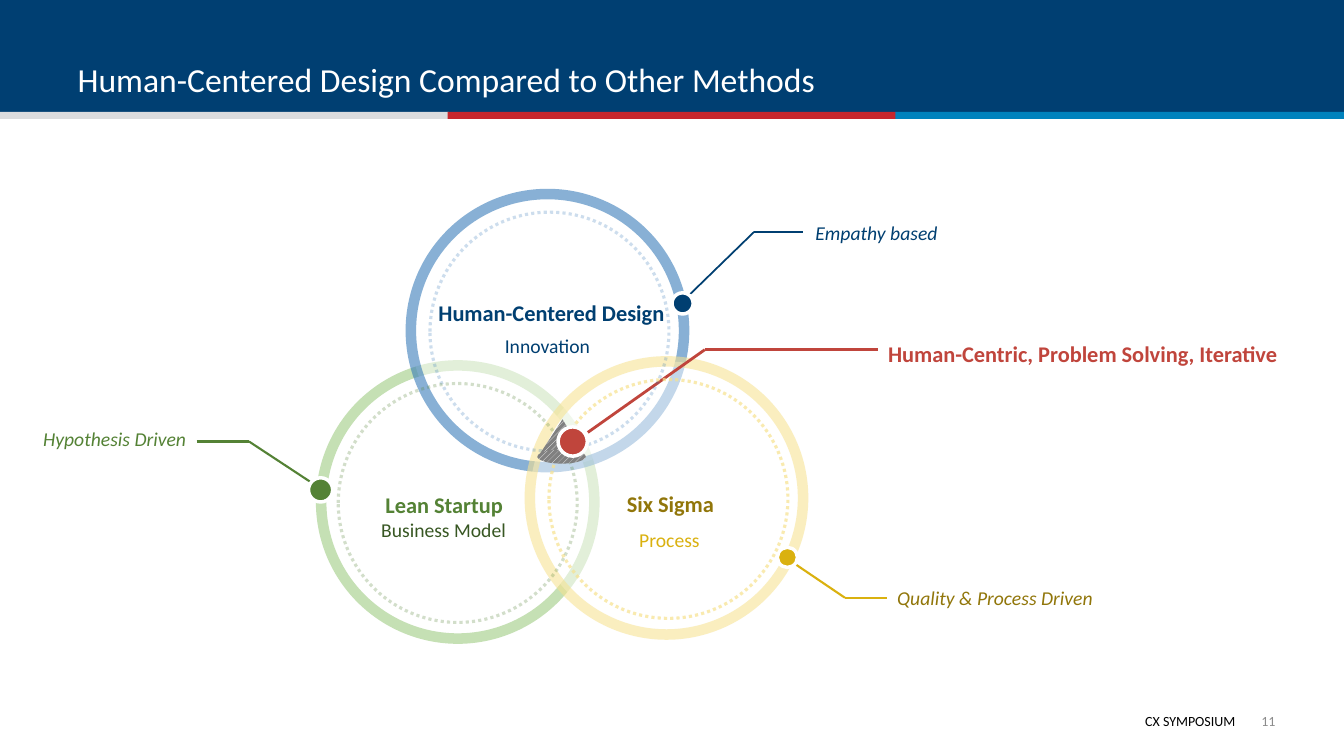
from itertools import pairwise

from lxml import etree
from pptx import Presentation
from pptx.dml.color import RGBColor
from pptx.enum.dml import MSO_LINE, MSO_PATTERN
from pptx.enum.shapes import MSO_CONNECTOR, MSO_SHAPE
from pptx.enum.text import MSO_ANCHOR, PP_ALIGN
from pptx.oxml.ns import qn
from pptx.util import Inches, Pt

RECT, OVAL, WEDGE = MSO_SHAPE.RECTANGLE, MSO_SHAPE.OVAL, MSO_SHAPE.ISOSCELES_TRIANGLE
LEFT, CENTER, RIGHT = PP_ALIGN.LEFT, PP_ALIGN.CENTER, PP_ALIGN.RIGHT
TOP, MIDDLE, BOTTOM = MSO_ANCHOR.TOP, MSO_ANCHOR.MIDDLE, MSO_ANCHOR.BOTTOM
STRAIGHT = MSO_CONNECTOR.STRAIGHT
DOTTED = MSO_LINE.ROUND_DOT
HATCH = MSO_PATTERN.WIDE_UPWARD_DIAGONAL

WHITE = RGBColor(0xFF, 0xFF, 0xFF)
BLACK = RGBColor(0x00, 0x00, 0x00)
GRAY = RGBColor(0x8C, 0x8C, 0x8C)
SHADE = RGBColor(0x80, 0x80, 0x80)
BAND = RGBColor(0x00, 0x3F, 0x72)
SILVER = RGBColor(0xDB, 0xDC, 0xDE)
CRIMSON = RGBColor(0xC6, 0x26, 0x2D)
AZURE = RGBColor(0x00, 0x82, 0xBD)
NAVY = RGBColor(0x00, 0x3F, 0x71)
BLUE = RGBColor(0x2E, 0x75, 0xB6)
MINT = RGBColor(0xC5, 0xE0, 0xB4)
GREEN = RGBColor(0x54, 0x82, 0x35)
FOREST = RGBColor(0x38, 0x57, 0x23)
CREAM = RGBColor(0xF7, 0xE2, 0x8F)
GOLD = RGBColor(0xDA, 0xB1, 0x0F)
OLIVE = RGBColor(0x91, 0x76, 0x0A)
RED = RGBColor(0xC0, 0x45, 0x3C)

RING, INNER = 2.71, 2.37  # circle diameters


def set_alpha(node, percent):
    """Set the opacity of the first colour under a node."""
    color = next(node.iter(qn("a:srgbClr")))
    etree.SubElement(color, qn("a:alpha")).set("val", str(percent * 1000))


def add_form(slide, kind, left, top, width, height, fill=None):
    form = slide.shapes.add_shape(
        kind, Inches(left), Inches(top), Inches(width), Inches(height))
    form.shadow.inherit = False
    form.line.fill.background()
    if fill is None:
        form.fill.background()
    else:
        form.fill.solid()
        form.fill.fore_color.rgb = fill
    return form


def add_disc(slide, x, y, size, fill, color, weight):
    """Draw a circle around its centre."""
    disc = add_form(slide, OVAL, x - size / 2, y - size / 2, size, size, fill)
    disc.line.color.rgb = color
    disc.line.width = Pt(weight)
    return disc


def add_ring(slide, x, y, color, alpha):
    ring = add_disc(slide, x, y, RING, WHITE, color, 7.5)
    set_alpha(ring.fill._xPr.find(qn("a:solidFill")), 50)
    set_alpha(ring.line._ln, alpha)


def add_dots(slide, x, y, color, alpha):
    ring = add_disc(slide, x, y, INNER, None, color, 2.25)
    ring.line.dash_style = DOTTED
    set_alpha(ring.line._ln, alpha)


def add_leader(slide, points, color, weight):
    """Join the points with straight lines."""
    for start, end in pairwise(points):
        line = slide.shapes.add_connector(
            STRAIGHT, *(Inches(value) for value in (*start, *end)))
        line.line.color.rgb = color
        line.line.width = Pt(weight)
        etree.SubElement(line._element.spPr, qn("a:effectLst"))


def add_hatch(slide, kind, left, top, width, height):
    form = add_form(slide, kind, left, top, width, height)
    form.fill.patterned()
    form.fill.pattern = HATCH
    form.fill.fore_color.rgb = WHITE
    form.fill.back_color.rgb = SHADE
    return form


def set_text(frame, text, size, color, align=LEFT, bold=False, italic=False):
    frame.text = text
    frame.word_wrap = True
    para = frame.paragraphs[0]
    para.alignment = align
    font = para.runs[0].font
    font.name, font.size = "Calibri", Pt(size)
    font.bold, font.italic = bold, italic
    font.color.rgb = color


def add_label(slide, box, text, size, color, align=LEFT, bold=False,
              italic=False, tight=False):
    label = slide.shapes.add_textbox(*(Inches(value) for value in box))
    frame = label.text_frame
    set_text(frame, text, size, color, align, bold, italic)
    frame.vertical_anchor = MIDDLE if tight else TOP
    if tight:
        frame.margin_left = frame.margin_right = 0
        frame.margin_top = frame.margin_bottom = 0


def add_header(slide):
    add_form(slide, RECT, 0, 0, 13.33, 1.14, BAND)
    for index, color in enumerate((SILVER, CRIMSON, AZURE)):
        add_form(slide, RECT, index * 4.44, 1.11, 4.45, 0.07, color)
    title = slide.shapes.title
    title.left, title.top = Inches(0.67), Inches(0.14)
    title.width, title.height = Inches(12), Inches(0.89)
    set_text(title.text_frame, "Human-Centered Design Compared to Other Methods",
             24, WHITE)
    title.text_frame.vertical_anchor = BOTTOM
    slide.shapes._spTree.append(title._element)  # bring in front of the band


def main():
    deck = Presentation()
    deck.slide_width, deck.slide_height = Inches(13.33), Inches(7.5)
    slide = deck.slides.add_slide(deck.slide_layouts[5])
    add_header(slide)

    # Footer
    add_label(slide, (5.51, 7.02, 6.84, 0.27), "CX SYMPOSIUM", 10, BLACK, RIGHT)
    add_label(slide, (12.29, 6.95, 0.36, 0.4), "11", 10, GRAY, RIGHT, tight=True)

    # Overlapping rings
    add_ring(slide, 4.54, 4.98, MINT, 100)
    add_ring(slide, 5.43, 3.28, BLUE, 56)
    add_ring(slide, 6.61, 4.94, CREAM, 56)

    # Leader lines
    add_leader(slide, [(6.75, 3.01), (7.48, 2.3), (7.96, 2.3)], NAVY, 1.25)
    add_leader(slide, [(5.83, 4.29), (6.99, 3.47), (8.71, 3.47)], RED, 2)
    add_leader(slide, [(1.95, 4.38), (2.47, 4.38), (3.26, 4.9)], GREEN, 1.5)
    add_leader(slide, [(7.73, 5.49), (8.38, 5.93), (8.8, 5.93)], GOLD, 1.5)

    # Markers on the rings
    for x, y, size, color in ((7.81, 5.53, 0.2, GOLD), (3.18, 4.86, 0.24, GREEN),
                              (6.77, 3.01, 0.21, NAVY)):
        add_disc(slide, x, y, size, color, WHITE, 2.5)

    # Dotted inner rings
    add_dots(slide, 5.45, 3.29, BLUE, 23)
    add_dots(slide, 6.63, 4.95, CREAM, 71)
    add_dots(slide, 4.54, 4.99, GREEN, 25)

    # Shared core
    wedge = add_hatch(slide, WEDGE, 5.33, 4.16, 0.48, 0.38)
    wedge.adjustments[0] = 0.52
    add_hatch(slide, OVAL, 5.33, 4.46, 0.48, 0.14)
    add_disc(slide, 5.68, 4.38, 0.29, RED, WHITE, 2.5)

    # Method names
    add_label(slide, (4.27, 2.89, 2.32, 0.42), "Human-Centered Design", 16, NAVY,
              RIGHT, bold=True, tight=True)
    add_label(slide, (6, 4.81, 1.3, 0.44), "Six Sigma", 16, OLIVE, CENTER, bold=True)
    add_label(slide, (3.63, 4.82, 1.55, 0.36), "Lean Startup", 16, GREEN, CENTER,
              bold=True)

    # Method aims
    for left, top, text, color in ((4.66, 3.26, "Innovation", NAVY),
                                   (5.87, 5.19, "Process", GOLD),
                                   (3.63, 5.09, "Business Model", FOREST)):
        add_label(slide, (left, top, 1.54, 0.35), text, 14, color, CENTER)

    # Callouts
    for box, text, color in (
            ((7.99, 2.14, 3.56, 0.67), "Empathy based", NAVY),
            ((8.8, 5.76, 2.28, 0.67), "Quality & Process Driven", OLIVE),
            ((0.33, 4.19, 1.96, 0.33), "Hypothesis Driven", GREEN)):
        add_label(slide, box, text, 14, color, italic=True)
    add_label(slide, (8.71, 3.33, 4.46, 0.67),
              "Human-Centric, Problem Solving, Iterative", 16, RED, bold=True)

    deck.save("out.pptx")


if __name__ == "__main__":
    main()
